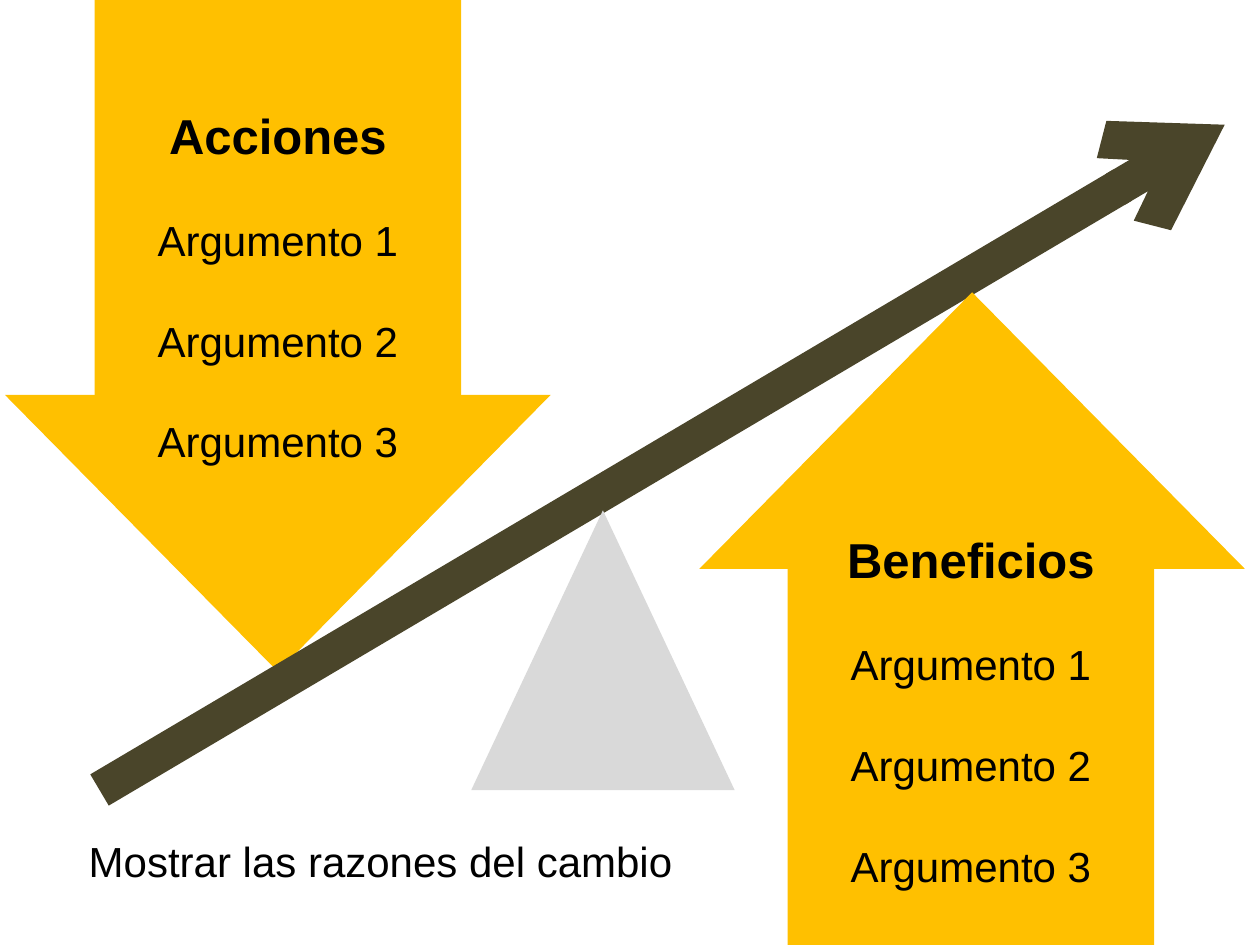
from lxml import etree
from pptx import Presentation
from pptx.dml.color import RGBColor
from pptx.enum.shapes import MSO_CONNECTOR, MSO_SHAPE
from pptx.enum.text import MSO_ANCHOR, MSO_AUTO_SIZE, PP_ALIGN
from pptx.oxml.ns import qn
from pptx.util import Inches, Pt

RECTANGLE = MSO_SHAPE.RECTANGLE
DOWN_ARROW = MSO_SHAPE.DOWN_ARROW
TRIANGLE = MSO_SHAPE.ISOSCELES_TRIANGLE
STRAIGHT = MSO_CONNECTOR.STRAIGHT
TOP, BOTTOM = MSO_ANCHOR.TOP, MSO_ANCHOR.BOTTOM
CENTER = PP_ALIGN.CENTER
GROW = MSO_AUTO_SIZE.SHAPE_TO_FIT_TEXT

BLANK_LAYOUT = 6
FONT = "Arial"
AMBER, BROWN, GREY, BLACK = "FFC000", "4A452A", "D9D9D9", "000000"
ARGUMENTS = ["Argumento 1", "Argumento 2", "Argumento 3"]


def color(hex_value):
    return RGBColor.from_string(hex_value)


def add_solid(slide, preset, left, top, width, height, fill):
    solid = slide.shapes.add_shape(
        preset, Inches(left), Inches(top), Inches(width), Inches(height))
    solid.shadow.inherit = False
    solid.fill.solid()
    solid.fill.fore_color.rgb = color(fill)
    solid.line.fill.background()
    return solid


def format_paragraph(paragraph, text, size, bold=False, spacing=None):
    paragraph.text = text
    paragraph.alignment = CENTER
    paragraph.line_spacing = spacing
    paragraph.font.name = FONT
    paragraph.font.size = Pt(size)
    paragraph.font.bold = bold
    paragraph.font.color.rgb = color(BLACK)


def add_weight_arrow(slide, left, top, rotation=0):
    arrow = add_solid(slide, DOWN_ARROW, left, top, 4.33, 5.04, AMBER)
    arrow.adjustments[0] = 0.31
    arrow.adjustments[1] = 0.507
    arrow.rotation = rotation


def add_argument_panel(slide, left, top, heading, anchor):
    panel = add_solid(slide, RECTANGLE, left, top, 2.91, 3.78, AMBER)
    frame = panel.text_frame
    frame.word_wrap = True
    frame.vertical_anchor = anchor
    format_paragraph(frame.paragraphs[0], heading, 28, bold=True, spacing=1.5)
    for argument in ARGUMENTS:
        format_paragraph(frame.add_paragraph(), argument, 24, spacing=2.0)


def add_lever(slide):
    lever = slide.shapes.add_connector(
        STRAIGHT, Inches(0.79), Inches(6.27), Inches(9.72), Inches(0.99))
    lever.line.color.rgb = color(BROWN)
    lever.line.width = Pt(20.75)
    etree.SubElement(lever.line._get_or_add_ln(), qn("a:tailEnd"), type="arrow")
    etree.SubElement(lever._element.spPr, qn("a:effectLst"))


def add_caption(slide, text):
    caption = slide.shapes.add_textbox(
        Inches(0.07), Inches(6.58), Inches(5.9), Inches(0.5))
    frame = caption.text_frame
    frame.word_wrap = True
    frame.auto_size = GROW
    format_paragraph(frame.paragraphs[0], text, 24)


def main():
    presentation = Presentation()
    presentation.slide_width = Inches(10)
    presentation.slide_height = Inches(7.5)
    slide = presentation.slides.add_slide(
        presentation.slide_layouts[BLANK_LAYOUT])

    add_weight_arrow(slide, 0.04, 0.29)
    add_lever(slide)
    add_solid(slide, TRIANGLE, 3.74, 4.05, 2.09, 2.22, GREY)
    add_argument_panel(slide, 0.75, -0.03, "Acciones", BOTTOM)
    add_weight_arrow(slide, 5.55, 2.32, rotation=180)
    add_argument_panel(slide, 6.25, 3.92, "Beneficios", TOP)
    add_caption(slide, "Mostrar las razones del cambio")

    presentation.save("out.pptx")


if __name__ == "__main__":
    main()
